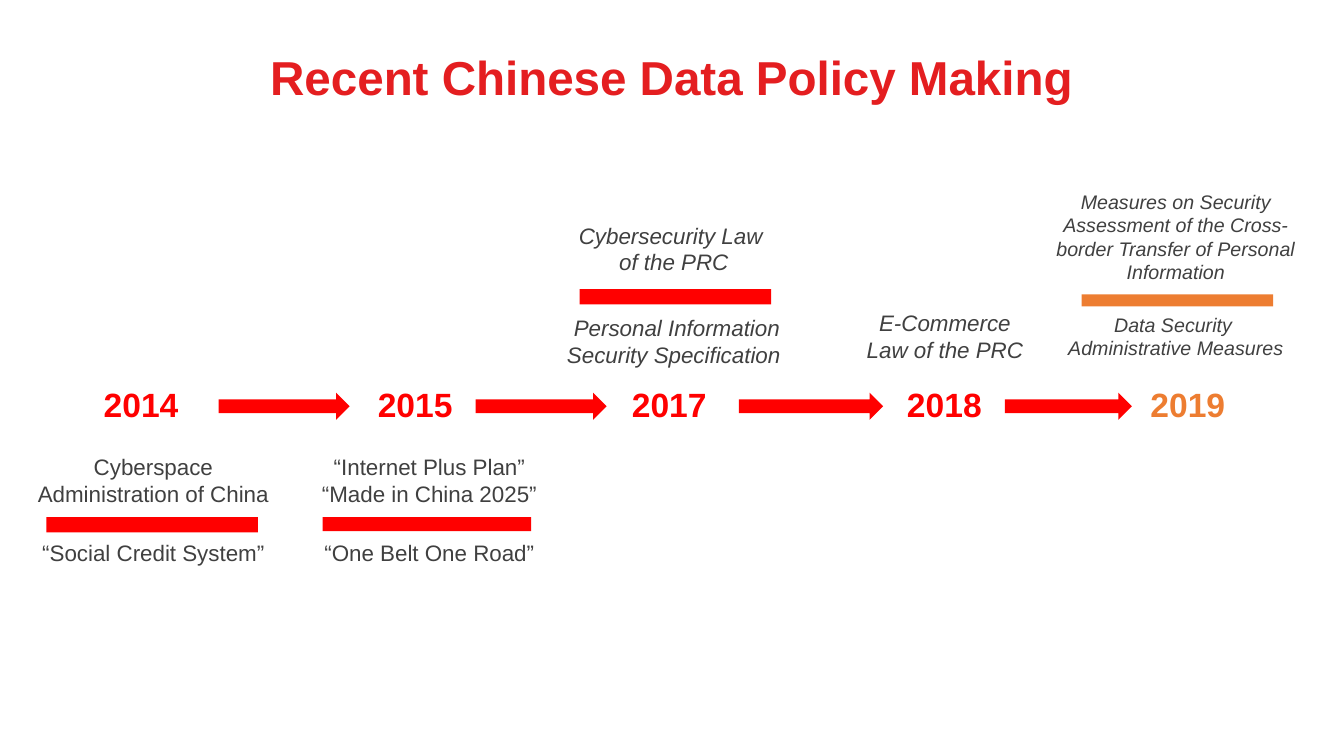
from pptx import Presentation
from pptx.dml.color import RGBColor
from pptx.enum.shapes import MSO_SHAPE as Preset
from pptx.enum.text import MSO_ANCHOR as Anchor, PP_ALIGN as Align
from pptx.util import Pt

TITLE_RED = RGBColor(0xE4, 0x1E, 0x20)
RED = RGBColor(0xFF, 0x00, 0x00)
ORANGE = RGBColor(0xED, 0x7D, 0x31)
GREY = RGBColor(0x40, 0x40, 0x40)

TITLE = "Recent Chinese Data Policy Making"
TITLE_FORMAT = {"size": Pt(34), "bold": True}
YEAR_FORMAT = {"size": Pt(24), "bold": True}
PLAIN = {"size": Pt(16)}
ITALIC = {"size": Pt(16), "italic": True}
SMALL_ITALIC = {"size": Pt(14), "italic": True}

# Year, centre, colour
YEARS = [
    ("2014", 100.8, RED),
    ("2015", 296.6, RED),
    ("2017", 478.1, RED),
    ("2018", 674.6, RED),
    ("2019", 848.5, ORANGE),
]
YEAR_TOP, YEAR_WIDTH, YEAR_HEIGHT = 271, 80, 36

# Left, width
ARROWS = [(156.2, 93.6), (339.8, 93.6), (527.8, 103), (717.8, 90.7)]
ARROW_TOP, ARROW_HEIGHT = 280.5, 19.4

# Box, colour
BARS = [
    ((33.1, 369.4, 151.2, 10.8), RED),
    ((230.4, 369.4, 149, 10.1), RED),
    ((414, 206.6, 136.8, 10.8), RED),
    ((772.6, 210.2, 136.8, 8.6), ORANGE),
]

# Box, format, lines above the bar, lines below it, gap for the bar
POLICIES = [
    ((13, 320.4, 193, 108.7), PLAIN,
     ["Cyberspace Administration of China"], ["“Social Credit System”"], 23),
    ((199.4, 320.4, 214.6, 90), PLAIN,
     ["“Internet Plus Plan”", "“Made in China 2025”"], ["“One Belt One Road”"], 23),
    ((397.4, 154.8, 167.8, 113.8), ITALIC,
     ["Cybersecurity Law ", "of the PRC"],
     [" Personal Information Security Specification "], 27.5),
    ((604.1, 217.4, 141.8, 46.1), ITALIC, ["E-Commerce Law of the PRC"], [], 0),
    ((745.2, 131.8, 189.4, 133.2), SMALL_ITALIC,
     ["Measures on Security Assessment of the Cross-border Transfer of Personal Information"],
     ["Data Security ", "Administrative Measures"], 20.7),
]


def add_text(slide, box, lines, text_format, color, anchor=Anchor.TOP):
    frame = slide.shapes.add_textbox(*map(Pt, box)).text_frame
    frame.word_wrap = True
    frame.vertical_anchor = anchor
    frame.text = "\n".join(lines)
    for paragraph in frame.paragraphs:
        paragraph.alignment = Align.CENTER
        font = paragraph.runs[0].font
        font.name = "Arial"
        font.color.rgb = color
        for name, value in text_format.items():
            setattr(font, name, value)
    return frame


def add_block(slide, preset, box, color):
    shape = slide.shapes.add_shape(preset, *map(Pt, box))
    shape.shadow.inherit = False
    shape.fill.solid()
    shape.fill.fore_color.rgb = color
    shape.line.fill.background()


def main():
    presentation = Presentation()
    presentation.slide_width, presentation.slide_height = Pt(960), Pt(540)
    slide = presentation.slides.add_slide(presentation.slide_layouts[6])

    title = add_text(slide, (37.4, 29.5, 884.9, 49.7), [TITLE], TITLE_FORMAT,
                     TITLE_RED, Anchor.BOTTOM)
    title.paragraphs[0].line_spacing = 0.9

    for year, center, color in YEARS:
        box = (center - YEAR_WIDTH / 2, YEAR_TOP, YEAR_WIDTH, YEAR_HEIGHT)
        add_text(slide, box, [year], YEAR_FORMAT, color)
    for left, width in ARROWS:
        add_block(slide, Preset.RIGHT_ARROW, (left, ARROW_TOP, width, ARROW_HEIGHT), RED)
    for box, color in BARS:
        add_block(slide, Preset.RECTANGLE, box, color)
    for box, text_format, above, below, gap in POLICIES:
        frame = add_text(slide, box, above + below, text_format, GREY)
        if below:
            frame.paragraphs[len(above)].space_before = Pt(gap)

    presentation.save("out.pptx")


if __name__ == "__main__":
    main()
